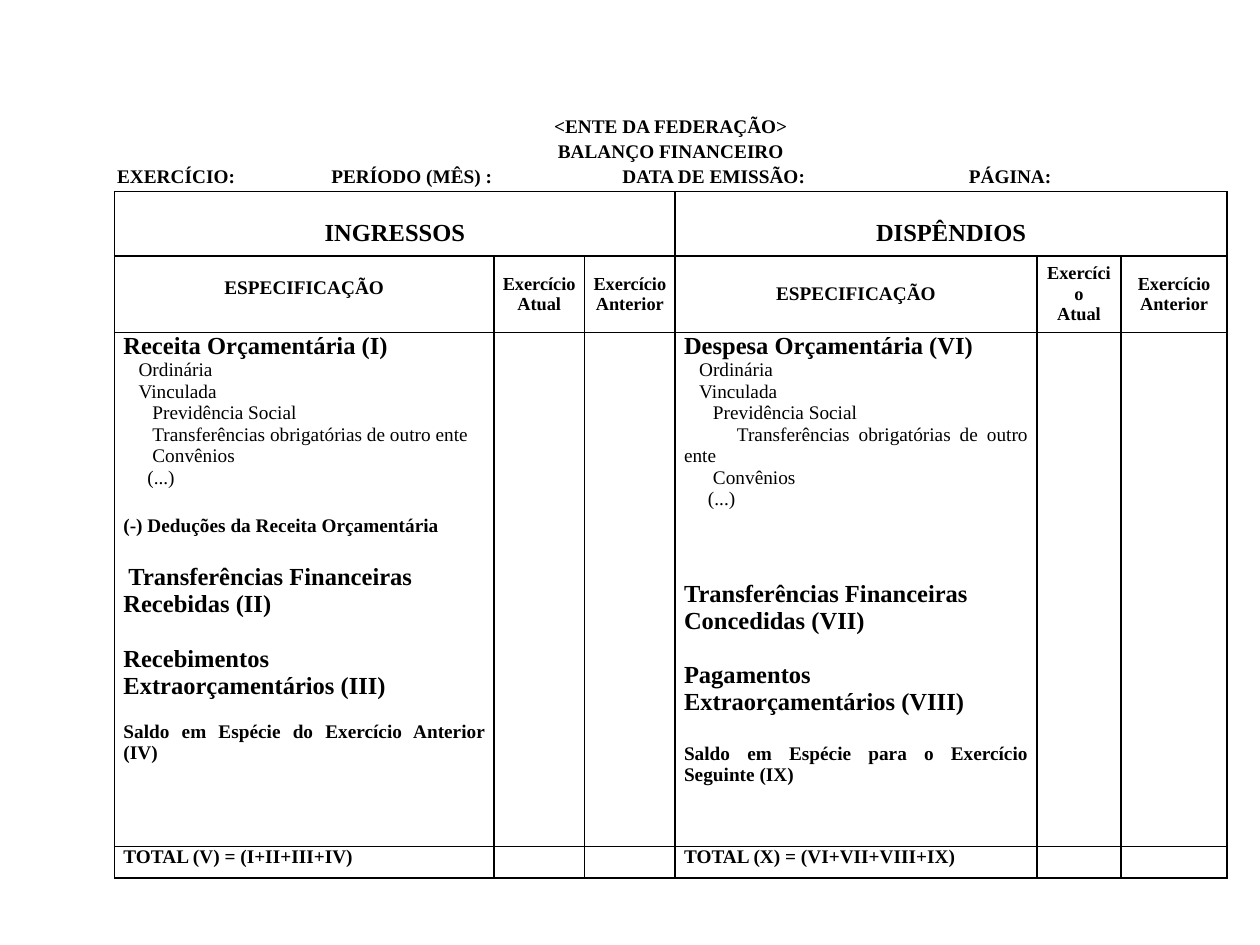
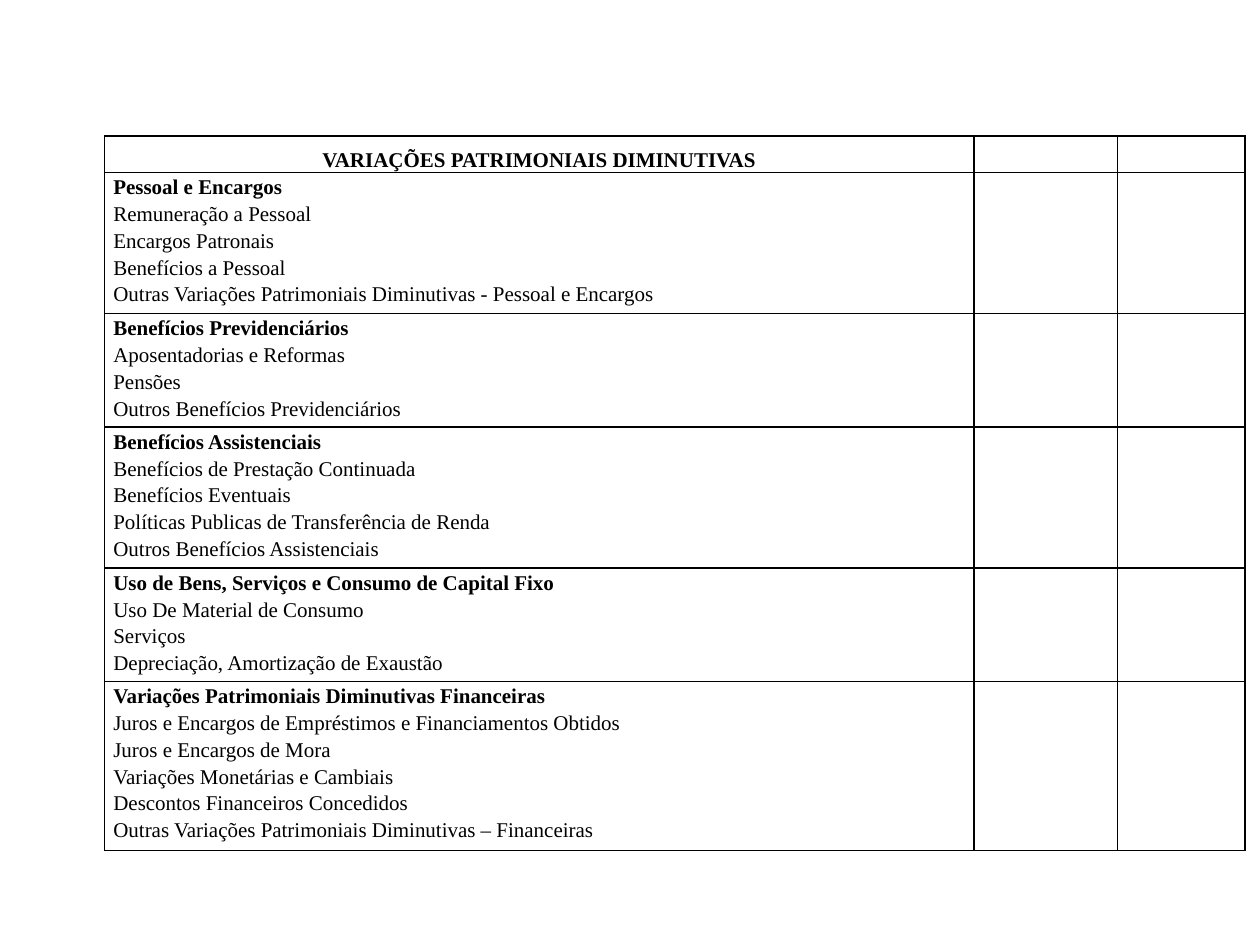
from lxml import etree
from pptx import Presentation
from pptx.dml.color import RGBColor
from pptx.enum import text
from pptx.oxml.ns import qn
from pptx.util import Inches, Pt

FONT = "Times New Roman"
COLORS = {"ink": "000000"}
LEFT, CENTER, JUSTIFY = text.PP_ALIGN.LEFT, text.PP_ALIGN.CENTER, text.PP_ALIGN.JUSTIFY
MIDDLE = text.MSO_ANCHOR.MIDDLE
SIDES = ("lnL", "lnR", "lnT", "lnB")

# Gaps, in points, as tall as one line of small or large text
SMALL_GAP, LARGE_GAP = 12.5, 15.5

BALANCE_TITLES = ["<ENTE DA FEDERAÇÃO>", "BALANÇO FINANCEIRO"]
BALANCE_FIELDS = "EXERCÍCIO:\tPERÍODO (MÊS) :\tDATA DE EMISSÃO:\tPÁGINA:"

HEADING = {"size": 14, "align": LEFT}
DETAIL = {"bold": False}
INCOME = [
    ("Receita Orçamentária (I)", {"size": 14}),
    ("Ordinária", {**DETAIL, "indent": 0.12}),
    ("Vinculada", {**DETAIL, "indent": 0.12}),
    ("Previdência Social", {**DETAIL, "indent": 0.23}),
    ("Transferências obrigatórias de outro ente", {**DETAIL, "indent": 0.23}),
    ("Convênios", {**DETAIL, "indent": 0.23}),
    ("(...)", {**DETAIL, "indent": 0.19}),
    ("(-) Deduções da Receita Orçamentária", {"align": LEFT, "before": LARGE_GAP}),
    ("Transferências Financeiras Recebidas (II)",
     {**HEADING, "before": LARGE_GAP, "indent": 0.04}),
    ("Recebimentos Extraorçamentários (III)", {**HEADING, "before": LARGE_GAP}),
    ("Saldo em Espécie do Exercício Anterior (IV)", {"before": SMALL_GAP}),
]
SPENDING = [
    ("Despesa Orçamentária (VI)", {"size": 14}),
    ("Ordinária", {**DETAIL, "indent": 0.12}),
    ("Vinculada", {**DETAIL, "indent": 0.12}),
    ("Previdência Social", {**DETAIL, "indent": 0.23}),
    ("Transferências obrigatórias de outro ente", {**DETAIL, "indent": 0.42}),
    ("Convênios", {**DETAIL, "indent": 0.23}),
    ("(...)", {**DETAIL, "indent": 0.19}),
    ("Transferências Financeiras Concedidas (VII)",
     {**HEADING, "before": 2 * SMALL_GAP + LARGE_GAP}),
    ("Pagamentos Extraorçamentários (VIII)", {**HEADING, "before": LARGE_GAP}),
    ("Saldo em Espécie para o Exercício Seguinte (IX)", {"before": LARGE_GAP}),
]
# First column, title, top margin of its "ESPECIFICAÇÃO", entries, total
BALANCE_HALVES = [
    (0, "INGRESSOS", 0.17, INCOME, "TOTAL (V) = (I+II+III+IV)"),
    (3, "DISPÊNDIOS", 0.22, SPENDING, "TOTAL (X) = (VI+VII+VIII+IX)"),
]

VARIATIONS_TITLE = "VARIAÇÕES PATRIMONIAIS DIMINUTIVAS"
VARIATION_GROUPS = [
    ["Pessoal e Encargos", "Remuneração a Pessoal", "Encargos Patronais",
     "Benefícios a Pessoal",
     "Outras Variações Patrimoniais Diminutivas - Pessoal e Encargos"],
    ["Benefícios Previdenciários", "Aposentadorias e Reformas", "Pensões",
     "Outros Benefícios Previdenciários"],
    ["Benefícios Assistenciais", "Benefícios de Prestação Continuada",
     "Benefícios Eventuais", "Políticas Publicas de Transferência de Renda",
     "Outros Benefícios Assistenciais"],
    ["Uso de Bens, Serviços e Consumo de Capital Fixo",
     "Uso De Material de Consumo", "Serviços",
     "Depreciação, Amortização de Exaustão"],
    ["Variações Patrimoniais Diminutivas Financeiras",
     "Juros e Encargos de Empréstimos e Financiamentos Obtidos",
     "Juros e Encargos de Mora", "Variações Monetárias e Cambiais",
     "Descontos Financeiros Concedidos",
     "Outras Variações Patrimoniais Diminutivas – Financeiras"],
]


def write(cell, words, size=11, bold=True, align=JUSTIFY, before=0, indent=0,
          spacing=None, tabs=()):
    """Add one paragraph to the cell, filling its empty first one if there is one."""
    frame = cell.text_frame
    para = frame.paragraphs[0]
    if para.runs:
        para = frame.add_paragraph()
    para.alignment = align
    properties = para._p.get_or_add_pPr()
    if indent:
        properties.set("marL", "0")
        properties.set("indent", str(Inches(indent)))
    if tabs:
        stops = etree.SubElement(properties, qn("a:tabLst"))
        for position in tabs:
            etree.SubElement(stops, qn("a:tab"), pos=str(Inches(position)), algn="l")
    if before:
        para.space_before = Pt(before)
    if spacing:
        para.line_spacing = spacing
    span = para.add_run()
    span.text = words
    span.font.name = FONT
    span.font.size = Pt(size)
    span.font.bold = bold
    span.font.color.rgb = RGBColor.from_string(COLORS["ink"])


def set_borders(cell, visible):
    """Draw the visible sides with a 1 pt line and clear the others."""
    properties = cell._tc.get_or_add_tcPr()
    for position, side in enumerate(SIDES):
        line = etree.Element(qn("a:" + side), w=str(Pt(1)))
        if side in visible:
            fill = etree.SubElement(line, qn("a:solidFill"))
            etree.SubElement(fill, qn("a:srgbClr"), val=COLORS["ink"])
        else:
            etree.SubElement(line, qn("a:noFill"))
        properties.insert(position, line)


def add_grid(page, left, top, widths, heights, open_rows=0):
    """Add a plain ruled table whose first open_rows rows have no rules."""
    table = page.shapes.add_table(
        len(heights), len(widths), Inches(left), Inches(top),
        Inches(sum(widths)), Inches(sum(heights))).table
    table.first_row = table.horz_banding = False
    for column, width in zip(table.columns, widths):
        column.width = Inches(width)
    for number, (row, height) in enumerate(zip(table.rows, heights)):
        row.height = Inches(height)
        if number >= open_rows:
            visible = SIDES
        else:
            visible = ("lnB",) if number == open_rows - 1 else ()
        for cell in row.cells:
            cell.margin_left = cell.margin_right = Inches(0.07)
            cell.margin_top = cell.margin_bottom = 0
            cell.fill.background()
            set_borders(cell, visible)
            # A small end mark keeps empty cells from stretching their row
            etree.SubElement(cell.text_frame.paragraphs[0]._p,
                             qn("a:endParaRPr"), sz="1100")
    return table


def fill_balance_header(table):
    last = len(table.columns) - 1
    for row in range(3):
        cell = table.cell(row, 0)
        cell.merge(table.cell(row, last))
        cell.margin_left = cell.margin_right = Inches(0.02)
    for row, title in enumerate(BALANCE_TITLES):
        write(table.cell(row, 0), title, align=CENTER)
    write(table.cell(2, 0), BALANCE_FIELDS, align=LEFT, tabs=(1.7, 4.01, 6.76))


def fill_balance_half(table, first, title, label_top, entries, total):
    heading = table.cell(3, first)
    heading.merge(table.cell(3, first + 2))
    heading.margin_top = Inches(0.22)
    write(heading, title, size=14, align=CENTER)

    label = table.cell(4, first)
    label.margin_top = Inches(label_top)
    write(label, "ESPECIFICAÇÃO", align=CENTER)
    for column, year in enumerate(("Atual", "Anterior"), first + 1):
        cell = table.cell(4, column)
        cell.vertical_anchor = MIDDLE
        for words in ("Exercício", year):
            write(cell, words, size=10.5, align=CENTER)

    for words, style in entries:
        write(table.cell(5, first), words, **style)
    write(table.cell(6, first), total)


def add_balance(page):
    table = add_grid(page, 0.91, 0.92, [3.01, 0.72, 0.72, 2.87, 0.67, 0.84],
                     [0.2, 0.2, 0.2, 0.51, 0.61, 4.08, 0.25], open_rows=3)
    fill_balance_header(table)
    for half in BALANCE_HALVES:
        fill_balance_half(table, *half)


def add_variations(page):
    table = add_grid(page, 0.83, 1.08, [6.9, 1.14, 1.01],
                     [0.29, 1.12, 0.9, 1.12, 0.9, 1.34])
    title = table.cell(0, 0)
    title.vertical_anchor = MIDDLE
    write(title, VARIATIONS_TITLE, size=12, align=CENTER, spacing=1.5)
    for row, group in enumerate(VARIATION_GROUPS, 1):
        for number, words in enumerate(group):
            write(table.cell(row, 0), words, size=12, bold=number == 0, spacing=1.15)


def main():
    deck = Presentation()
    deck.slide_width, deck.slide_height = Inches(10), Inches(7.5)
    for add_content in (add_balance, add_variations):
        add_content(deck.slides.add_slide(deck.slide_layouts[6]))
    deck.save("out.pptx")


if __name__ == "__main__":
    main()
